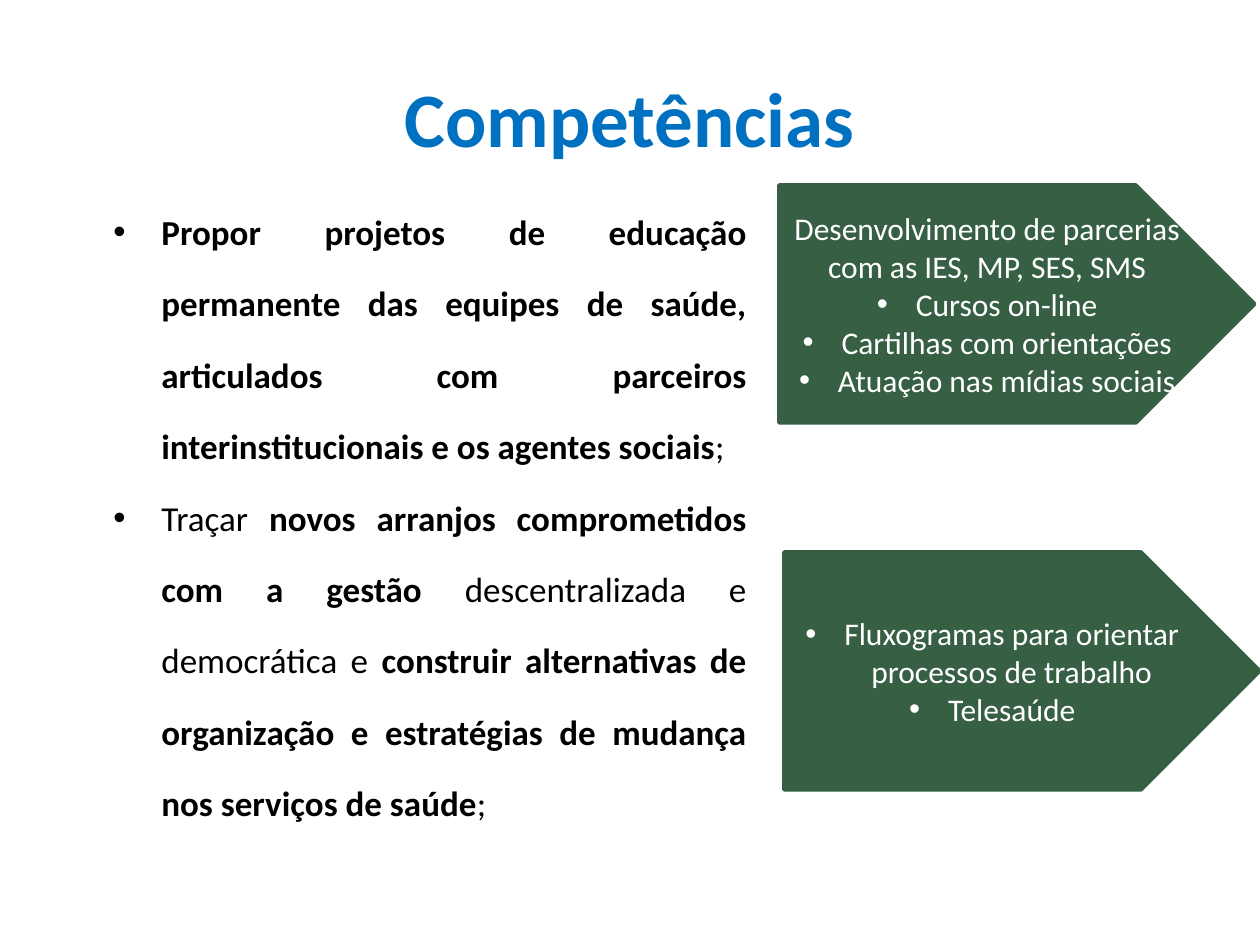
from lxml import etree
from pptx import Presentation
from pptx.dml.color import RGBColor
from pptx.enum.shapes import MSO_SHAPE
from pptx.enum.text import MSO_ANCHOR, PP_ALIGN
from pptx.oxml.ns import qn
from pptx.util import Emu, Pt

PX = 914400 // 126
CENTER, JUSTIFY = PP_ALIGN.CENTER, PP_ALIGN.JUSTIFY
TOP, MIDDLE = MSO_ANCHOR.TOP, MSO_ANCHOR.MIDDLE
PENTAGON = MSO_SHAPE.PENTAGON

THEME = {
    "font": "Calibri",
    "blue": RGBColor.from_string("0070C0"),
    "black": RGBColor.from_string("000000"),
    "green": RGBColor.from_string("375F44"),
    "white": RGBColor.from_string("FFFFFF"),
    "title": Pt(44),
    "body": Pt(20),
    "arrow": Pt(18),
}

# A paragraph is (bulleted, [(text, bold), ...]).
TITLE = [(False, [("Competências", True)])]
COMPETENCES = [
    (True, [
        ("Propor projetos de educação permanente das equipes de saúde, "
         "articulados com parceiros interinstitucionais e os agentes sociais", True),
        (";", False),
    ]),
    (True, [
        ("Traçar ", False),
        ("novos arranjos comprometidos com a gestão ", True),
        ("descentralizada e democrática e ", False),
        ("construir alternativas de organização e estratégias de mudança "
         "nos serviços de saúde", True),
        (";", False),
    ]),
]
ARROW_SIZE = (476, 238)
ACTIONS = [  # (left, top), paragraphs
    ((779, 185), [
        (False, [("Desenvolvimento de parcerias com as IES, MP, SES, SMS", False)]),
        (True, [("Cursos on-line", False)]),
        (True, [("Cartilhas com orientações", False)]),
        (True, [("Atuação nas mídias sociais", False)]),
    ]),
    ((784, 552), [
        (True, [("Fluxogramas para orientar processos de trabalho", False)]),
        (True, [("Telesaúde", False)]),
    ]),
]


def px(*lengths):
    return [Emu(length * PX) for length in lengths]


def add_bullet(paragraph, margin, hanging):
    properties = paragraph._p.get_or_add_pPr()
    properties.set("marL", str(margin * PX))
    properties.set("indent", str(-hanging * PX))
    etree.SubElement(properties, qn("a:buFont")).set("typeface", "Arial")
    etree.SubElement(properties, qn("a:buChar")).set("char", "•")


def write(shape, paragraphs, *, size, color, align=CENTER, anchor=MIDDLE,
          spacing=None, margin=39, hanging=39):
    frame = shape.text_frame
    frame.word_wrap = True
    frame.vertical_anchor = anchor
    for index, (bulleted, runs) in enumerate(paragraphs):
        paragraph = frame.add_paragraph() if index else frame.paragraphs[0]
        paragraph.alignment = align
        if spacing:
            paragraph.line_spacing = spacing
        if bulleted:
            add_bullet(paragraph, margin, hanging)
        for text, bold in runs:
            run = paragraph.add_run()
            run.text = text
            run.font.name = THEME["font"]
            run.font.size = size
            run.font.bold = bold
            run.font.color.rgb = color


def add_arrow(slide, position):
    arrow = slide.shapes.add_shape(PENTAGON, *px(*position, *ARROW_SIZE))
    arrow.shadow.inherit = False
    arrow.fill.solid()
    arrow.fill.fore_color.rgb = THEME["green"]
    arrow.line.color.rgb = THEME["green"]
    arrow.line.width = Pt(2)
    return arrow


def main():
    deck = Presentation()
    deck.slide_width, deck.slide_height = px(1260, 945)
    slide = deck.slides.add_slide(deck.slide_layouts[6])

    title = slide.shapes.add_textbox(*px(63, 38, 1134, 157))
    write(title, TITLE, size=THEME["title"], color=THEME["blue"])

    competences = slide.shapes.add_textbox(*px(54, 175, 705, 735))
    write(competences, COMPETENCES, size=THEME["body"], color=THEME["black"],
          align=JUSTIFY, anchor=TOP, spacing=1.7, margin=95, hanging=48)

    for position, actions in ACTIONS:
        write(add_arrow(slide, position), actions,
              size=THEME["arrow"], color=THEME["white"])

    deck.save("out.pptx")


if __name__ == "__main__":
    main()
